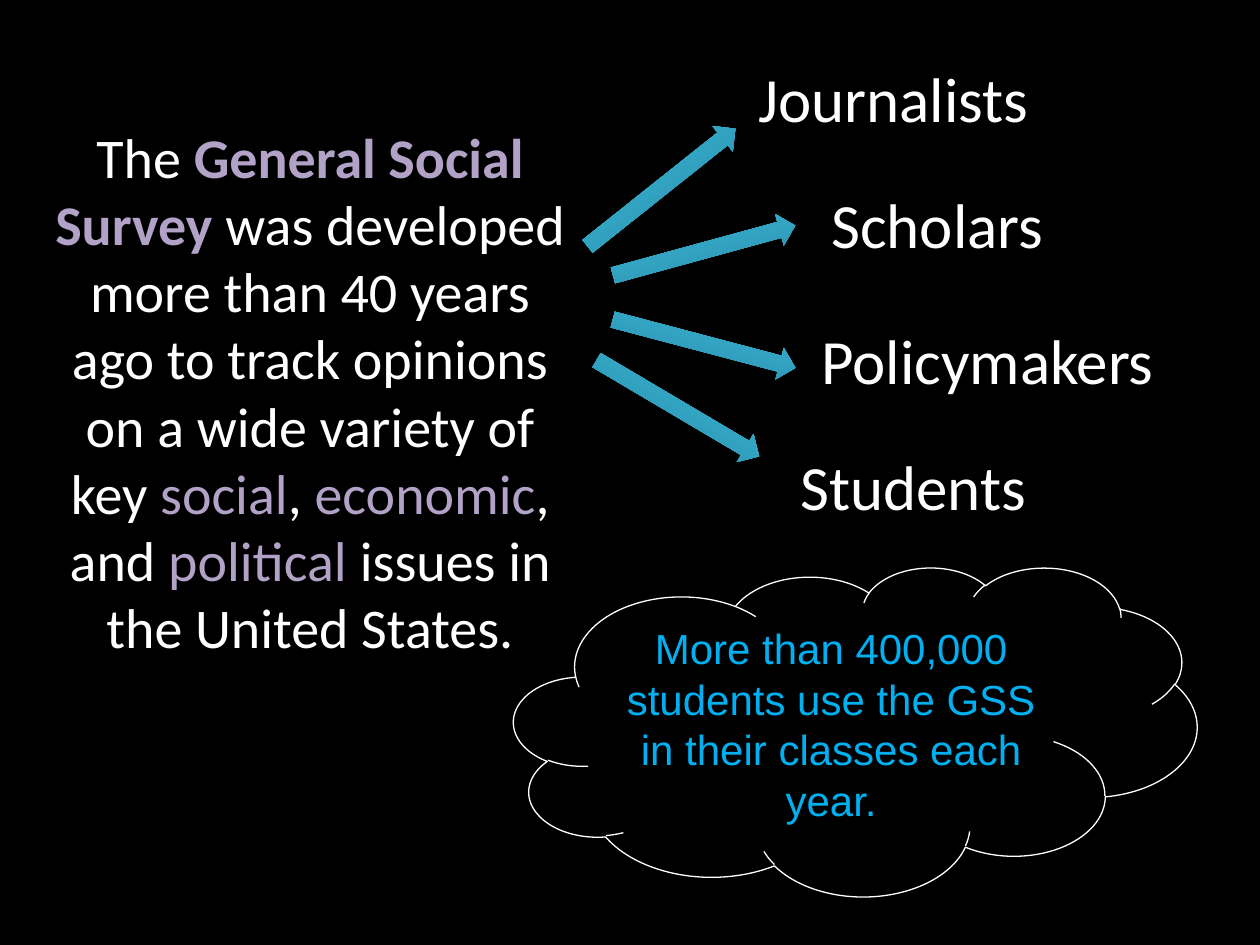
import copy

import pptx
import pptx.dml.color
import pptx.enum.shapes
import pptx.enum.text
import pptx.util

Cm = pptx.util.Cm
Pt = pptx.util.Pt
Shape = pptx.enum.shapes.MSO_SHAPE
Align = pptx.enum.text.PP_ALIGN
Anchor = pptx.enum.text.MSO_ANCHOR

COLORS = {
    "back": "000000",
    "text": "FFFFFF",
    "key": "B3A2C7",
    "note": "00B0F0",
    "dark": "2A88A2",
    "mid": "37B1D2",
    "light": "34B4D6",
}

# Text, label left and top, label width, arrow left and top, arrow turn
GROUPS = [
    ("Journalists", 3.61, 0, 7.19, 0, 2.38, -38.5),
    ("Scholars", 5.08, 2.54, 7.19, 0.86, 3.65, -15.3),
    ("Policymakers", 4.88, 5.28, 7.82, 0.86, 5.53, 14.8),
    ("Students", 4.45, 7.82, 5.92, 0.33, 6.83, 30.6),
]


def rgb(name):
    return pptx.dml.color.RGBColor.from_string(COLORS[name])


def write(par, text, size=36, font="Calibri", color="text", bold=False):
    run = par.add_run()
    run.text = text
    run.font.size = Pt(size)
    run.font.name = font
    run.font.bold = bold
    run.font.color.rgb = rgb(color)


def add_box(slide, left, top, width, height, align=Align.LEFT):
    """Add a wrapping text box and return its first paragraph."""
    box = slide.shapes.add_textbox(Cm(left), Cm(top), Cm(width), Cm(height))
    box.text_frame.word_wrap = True
    par = box.text_frame.paragraphs[0]
    par.alignment = align
    return par


def add_arrow(slide, left, top, turn):
    arrow = slide.shapes.add_shape(
        Shape.RIGHT_ARROW, Cm(left), Cm(top), Cm(3.81), Cm(0.66))
    arrow.rotation = turn
    arrow.shadow.inherit = False
    arrow.line.fill.background()
    arrow.fill.gradient()
    arrow.fill.gradient_angle = 90
    stops = arrow.fill._fill._gradFill.gsLst
    stops.insert(1, copy.deepcopy(stops[0]))
    shades = [(0, "dark"), (0.8, "mid"), (1, "light")]
    for stop, (place, name) in zip(arrow.fill.gradient_stops, shades):
        stop.position = place
        stop.color.rgb = rgb(name)


def add_survey(slide, left, top, width, height):
    par = add_box(slide, left, top, width, height, Align.CENTER)
    write(par, "The ", size=32)
    write(par, "General Social Survey ", size=32, color="key", bold=True)
    write(par, "was developed more than 40 years ago to track opinions "
               "on a wide variety of key ", size=32)
    for word, rest in [("social", ", "), ("economic", ", and "),
                       ("political", " issues in the United States.")]:
        write(par, word, size=32, color="key")
        write(par, rest, size=32)


def add_groups(slide, left, top):
    """Place the user groups and the arrows that lead to them."""
    for text, x, y, width, *_ in GROUPS:
        write(add_box(slide, left + x, top + y, width, 1.8), text)
    for *_, x, y, turn in GROUPS:
        add_arrow(slide, left + x, top + y, turn)


def add_cloud(slide, left, top, width, height):
    cloud = slide.shapes.add_shape(
        Shape.CLOUD, Cm(left), Cm(top), Cm(width), Cm(height))
    cloud.shadow.inherit = False
    cloud.fill.background()
    cloud.line.color.rgb = rgb("text")
    cloud.line.width = Pt(0.75)
    frame = cloud.text_frame
    frame.word_wrap = True
    frame.vertical_anchor = Anchor.MIDDLE
    par = frame.paragraphs[0]
    par.alignment = Align.CENTER
    write(par, "More than 400,000 students use the GSS in their classes "
               "each year.", size=24, font="Arial", color="note")


def main():
    deck = pptx.Presentation()
    deck.slide_width, deck.slide_height = Cm(25.4), Cm(19.05)
    slide = deck.slides.add_slide(deck.slide_layouts[6])
    slide.background.fill.solid()
    slide.background.fill.fore_color.rgb = rgb("back")
    add_survey(slide, 0.64, 2.34, 11.23, 11.2)
    add_groups(slide, 11.43, 1.07)
    add_cloud(slide, 10.36, 11.43, 13.77, 6.63)
    deck.save("out.pptx")


if __name__ == "__main__":
    main()
